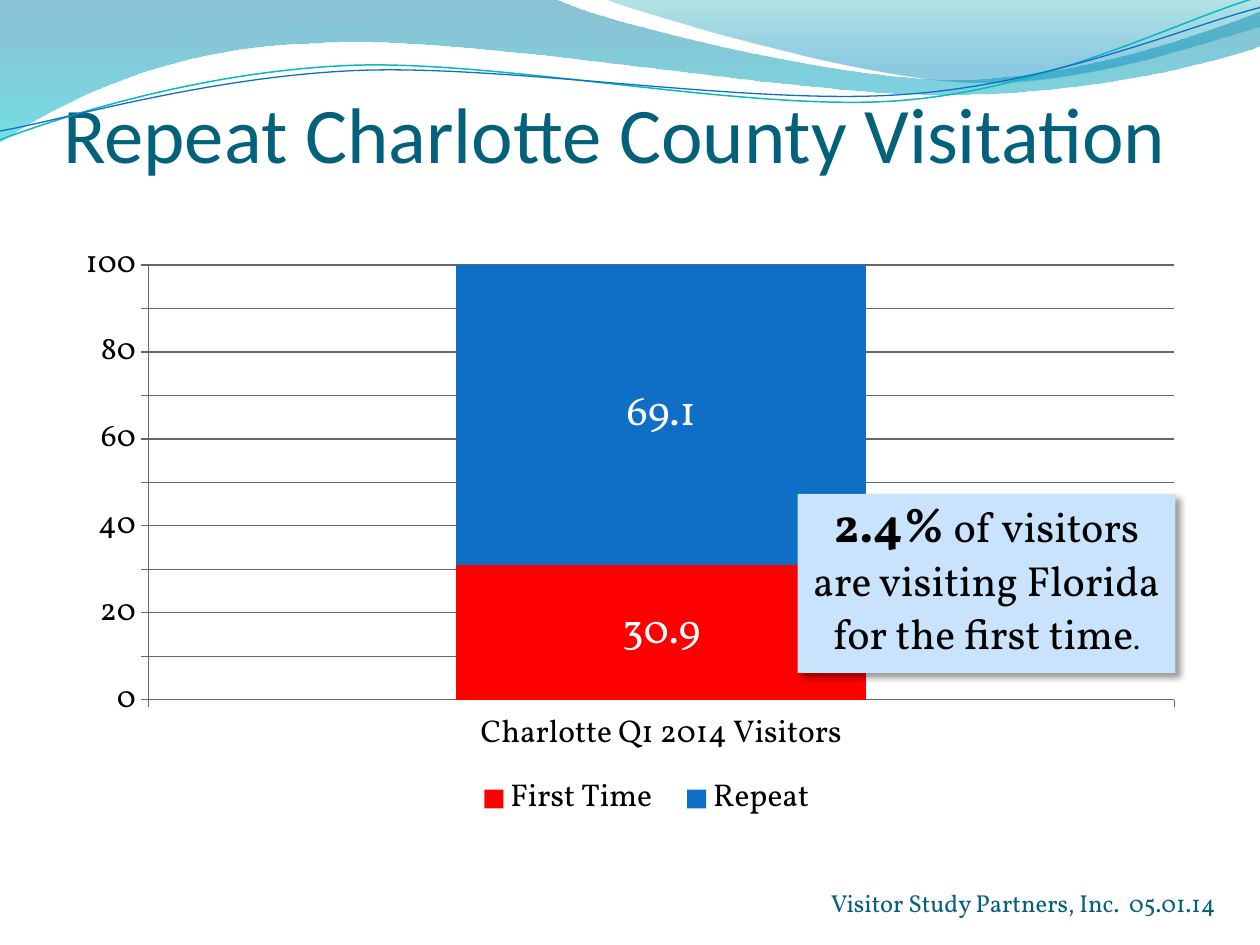
from lxml import etree
from pptx import Presentation
from pptx import util as u
from pptx.chart import data as chart_data
from pptx.dml.color import RGBColor
from pptx.enum import chart as charts, shapes, text
from pptx.oxml.ns import qn

COLORS = {
    "title": "04617B", "text": "000000", "label": "FFFFFF", "axis": "666666",
    "first_time": "FF0000", "repeat": "0F6FC6", "callout": "C8E3FB",
    "teal_line": "0AB8BF", "blue_line": "0F6FC6",
    "wave_top": "0074A1", "wave_bottom": "00C6CF",
    "crest_top": "00A1A9", "crest_bottom": "008BBF",
}
BODY_FONT = "Vollkorn"
TITLE_FONT = "Calibri"

WAVE = [(0, 0), (4.4, -0.01), (4.76, 0.17, 6.64, 0.63, 7.58, 0.63),
        (8.53, 0.63, 9.58, 0.26, 10, 0.09), (10.01, 0.36),
        (9.83, 0.44, 8.7, 0.76, 7.46, 0.75), (6.22, 0.75, 3.82, 0.28, 2.57, 0.34),
        (1.29, 0.36, 0.46, 0.83, -0.01, 1.13), (0, 0)]
CREST = [(4.79, -0.01), (5.09, 0.11, 6.82, 0.62, 7.69, 0.65),
         (8.56, 0.69, 9.61, 0.32, 10, 0.21), (10, 0), (4.79, -0.01)]
TEAL_LINE = [(0, 1.11), (0.48, 0.93, 1.58, 0.57, 2.77, 0.52),
             (3.95, 0.47, 5.93, 0.89, 7.13, 0.8), (8.33, 0.71, 9.38, 0.15, 9.98, -0.02)]
BLUE_LINE = [(0, 1.04), (0.47, 0.96, 1.64, 0.61, 2.83, 0.56),
             (4.03, 0.51, 5.97, 0.84, 7.17, 0.75), (8.36, 0.67, 9.41, 0.21, 10, 0.06)]


def color(name):
    """Return the named colour."""
    return RGBColor.from_string(COLORS[name])


def inches(*lengths):
    """Convert several lengths to inches."""
    return [u.Inches(length) for length in lengths]


def style_font(font, size, color_name, name=BODY_FONT, bold=False):
    """Set face, size, weight and colour of a font."""
    font.name, font.size, font.bold = name, u.Pt(size), bold
    font.color.rgb = color(color_name)


def add_outline(slide, segments, closed):
    """Draw a freeform whose six-number segments are cubic curves."""
    anchors = [inches(*segment[-2:]) for segment in segments]
    builder = slide.shapes.build_freeform(*anchors[0])
    builder.add_line_segments(anchors[1:], close=closed)
    shape = builder.convert_to_shape()
    shape.shadow.inherit = False
    edges = list(shape.element.spPr.iter(qn("a:lnTo")))
    for edge, segment in zip(edges, segments[1:]):
        if len(segment) == 2:
            continue
        curve = etree.Element(qn("a:cubicBezTo"))
        for x, y in zip(segment[::2], segment[1::2]):
            etree.SubElement(curve, qn("a:pt"), x=str(u.Inches(x) - shape.left),
                             y=str(u.Inches(y) - shape.top))
        edge.getparent().replace(edge, curve)
    return shape


def add_band(slide, segments, stops):
    """Add a closed band with a translucent vertical gradient."""
    shape = add_outline(slide, segments, True)
    shape.line.fill.background()
    shape.fill.gradient()
    shape.fill.gradient_angle = 270
    for stop, (position, name, _) in zip(shape.fill.gradient_stops, stops):
        stop.position = position
        stop.color.rgb = color(name)
    for element, (_, _, opacity) in zip(shape.element.spPr.iter(qn("a:srgbClr")), stops):
        etree.SubElement(element, qn("a:alpha"), val=str(opacity * 1000))


def add_header_waves(slide):
    """Add the two bands and two lines across the top."""
    add_band(slide, WAVE, [(0, "wave_top", 45), (1, "wave_bottom", 55)])
    add_band(slide, CREST, [(0, "crest_top", 30), (0.8, "crest_bottom", 45)])
    for segments, name, width in ((TEAL_LINE, "teal_line", 0.85),
                                  (BLUE_LINE, "blue_line", 0.75)):
        shape = add_outline(slide, segments, False)
        shape.fill.background()
        shape.line.color.rgb = color(name)
        shape.line.width = u.Pt(width)


def add_credit(slide, box):
    """Add the source and date line."""
    frame = slide.shapes.add_textbox(*box).text_frame
    frame.word_wrap = True
    paragraph = frame.paragraphs[0]
    paragraph.text = "Visitor Study Partners, Inc.  05.01.14"
    paragraph.alignment = text.PP_ALIGN.RIGHT
    style_font(paragraph.font, 14, "title")


def set_title(slide, box):
    """Fill and place the title placeholder."""
    title = slide.shapes.title
    title.left, title.top, title.width, title.height = box
    frame = title.text_frame
    frame.auto_size = text.MSO_AUTO_SIZE.NONE
    frame.vertical_anchor = text.MSO_ANCHOR.BOTTOM
    frame.margin_left = frame.margin_right = frame.margin_bottom = 0
    frame.margin_top = u.Inches(0.05)
    paragraph = frame.paragraphs[0]
    paragraph.text = "Repeat Charlotte County Visitation"
    paragraph.alignment = text.PP_ALIGN.LEFT
    style_font(paragraph.font, 45, "title", TITLE_FONT)


def place_legend(legend, **fractions):
    """Place the legend by fractions of the chart area."""
    layout = etree.Element(qn("c:layout"))
    manual = etree.SubElement(layout, qn("c:manualLayout"))
    for mode in ("xMode", "yMode"):
        etree.SubElement(manual, qn(f"c:{mode}"), val="edge")
    for name, fraction in fractions.items():
        etree.SubElement(manual, qn(f"c:{name}"), val=str(fraction))
    element = legend._element
    for previous in element.findall(qn("c:layout")):
        element.remove(previous)
    element.find(qn("c:legendPos")).addnext(layout)


def add_visitor_chart(slide, box):
    """Add the stacked column of first-time and repeat visitors."""
    data = chart_data.CategoryChartData()
    data.categories = ["Charlotte Q1 2014 Visitors"]
    data.add_series("First Time", [30.9])
    data.add_series("Repeat", [69.1])
    chart = slide.shapes.add_chart(charts.XL_CHART_TYPE.COLUMN_STACKED, *box, data).chart
    chart.has_title = False
    style_font(chart.font, 18, "text")
    chart.has_legend = True
    chart.legend.position = charts.XL_LEGEND_POSITION.BOTTOM
    chart.legend.include_in_layout = False
    place_legend(chart.legend, x=0.35, y=0.9, w=0.33, h=0.08)

    value_axis = chart.value_axis
    value_axis.maximum_scale = 100
    value_axis.has_major_gridlines = True
    for axis in (value_axis, chart.category_axis):
        axis.major_tick_mark = charts.XL_TICK_MARK.OUTSIDE
    for line in (value_axis.format.line, chart.category_axis.format.line,
                 value_axis.major_gridlines.format.line):
        line.color.rgb = color("axis")
        line.width = u.Pt(0.75)

    plot = chart.plots[0]
    plot.gap_width, plot.overlap = 150, 100
    plot.vary_by_categories = False
    for series, name in zip(plot.series, ("first_time", "repeat")):
        series.format.fill.solid()
        series.format.fill.fore_color.rgb = color(name)
        labels = series.data_labels
        labels.show_value = True
        labels.position = charts.XL_LABEL_POSITION.CENTER
        style_font(labels.font, 24, "label")


def add_shadow(shape):
    """Give a shape a soft shadow to the lower right."""
    shape.shadow.inherit = False
    effects = shape.element.spPr.find(qn("a:effectLst"))
    shadow = etree.SubElement(effects, qn("a:outerShdw"), blurRad=str(u.Pt(4)),
                              dist=str(u.Pt(4)), dir="2700000", algn="tl", rotWithShape="0")
    shade = etree.SubElement(shadow, qn("a:srgbClr"), val=COLORS["text"])
    etree.SubElement(shade, qn("a:alpha"), val="40000")


def add_callout(slide, box):
    """Add the shaded note over the chart."""
    shape = slide.shapes.add_shape(shapes.MSO_SHAPE.RECTANGLE, *box)
    shape.fill.solid()
    shape.fill.fore_color.rgb = color("callout")
    shape.line.fill.background()
    add_shadow(shape)
    frame = shape.text_frame
    frame.word_wrap = True
    frame.vertical_anchor = text.MSO_ANCHOR.TOP
    paragraph = frame.paragraphs[0]
    paragraph.alignment = text.PP_ALIGN.CENTER
    paragraph.line_spacing = u.Pt(30)
    for words, size, bold in (("2.4%", 28, True),
                              (" of visitors are visiting Florida for the first time", 24, False),
                              (".", 16, False)):
        run = paragraph.add_run()
        run.text = words
        style_font(run.font, size, "text", bold=bold)


def main():
    """Build and save the slide."""
    presentation = Presentation()
    presentation.slide_width, presentation.slide_height = inches(10, 7.5)
    slide = presentation.slides.add_slide(presentation.slide_layouts[5])
    add_header_waves(slide)
    add_credit(slide, inches(6.33, 7, 3.42, 0.34))
    set_title(slide, inches(0.5, 0.17, 9, 1.25))
    add_visitor_chart(slide, inches(0.5, 1.83, 9, 4.8))
    add_callout(slide, inches(6.33, 3.92, 3, 1.42))
    presentation.save("out.pptx")


if __name__ == "__main__":
    main()
